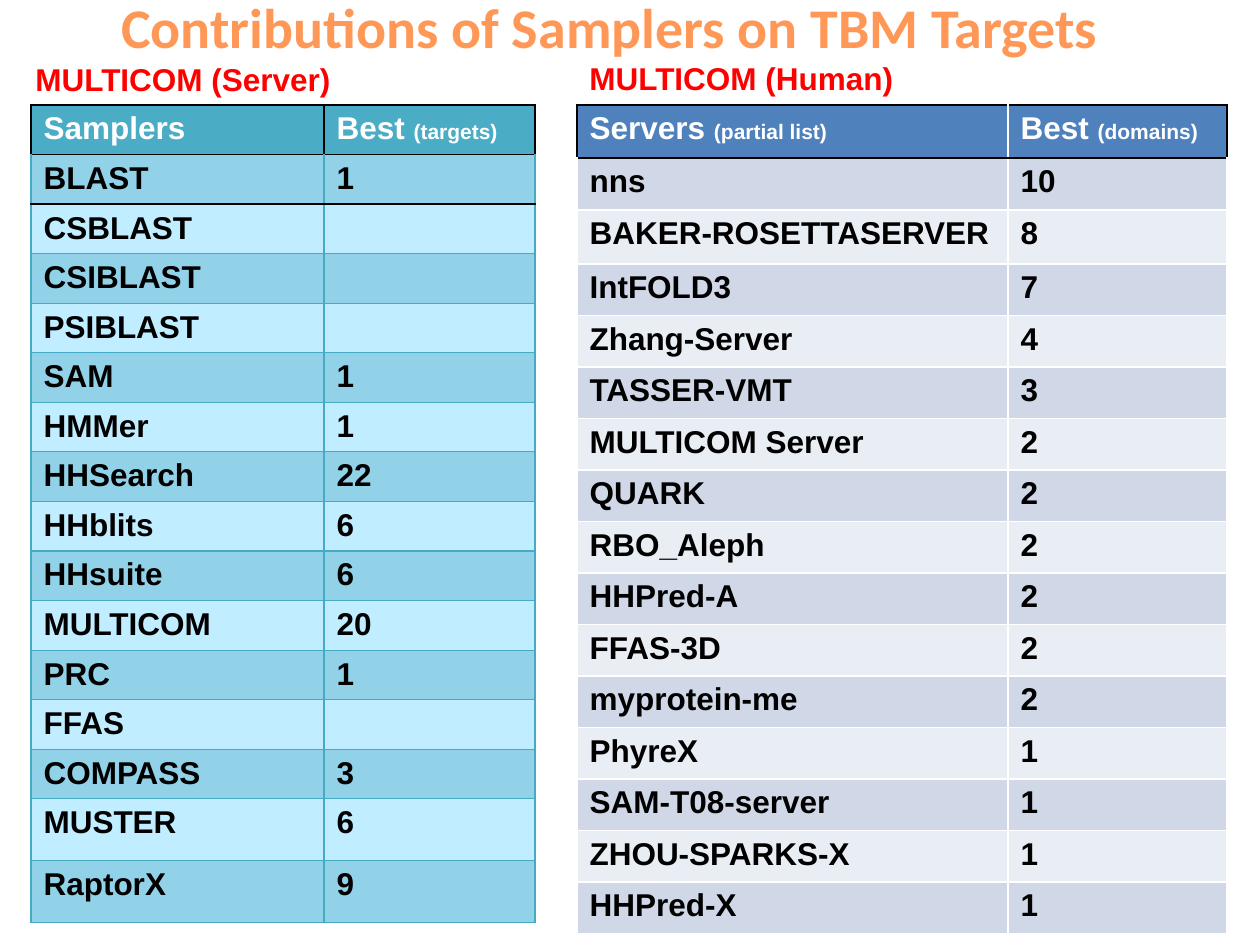
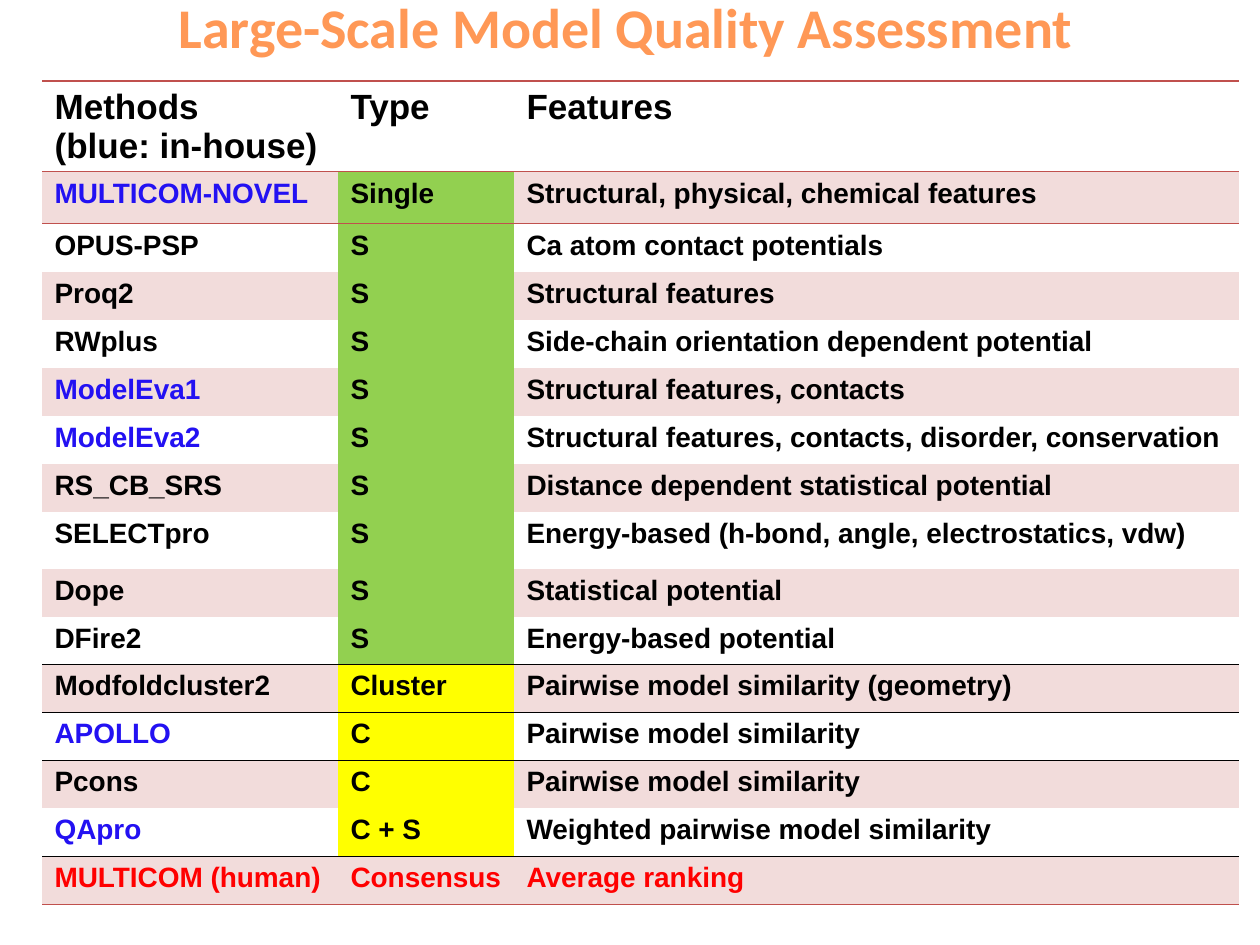
import pptx
import pptx.dml.color
import pptx.enum.text
import pptx.oxml.ns
import pptx.util
from lxml import etree

RGBColor = pptx.dml.color.RGBColor
BLACK = RGBColor(0x00, 0x00, 0x00)
WHITE = RGBColor(0xFF, 0xFF, 0xFF)
RED = RGBColor(0xFF, 0x00, 0x00)
BLUE = RGBColor(0x23, 0x11, 0xF2)
ORANGE = RGBColor(0xFF, 0x98, 0x56)
GREEN = RGBColor(0x92, 0xD0, 0x50)
YELLOW = RGBColor(0xFF, 0xFF, 0x00)
TEAL = RGBColor(0x4B, 0xAC, 0xC6)
TEAL_LINE = RGBColor(0x46, 0xAA, 0xC5)
TEAL_BANDS = RGBColor(0x92, 0xD2, 0xE8), RGBColor(0xC0, 0xED, 0xFF)
NAVY = RGBColor(0x4F, 0x81, 0xBD)
NAVY_BANDS = RGBColor(0xD0, 0xD8, 0xE8), RGBColor(0xE9, 0xED, 0xF4)
BRICK = RGBColor(0xC0, 0x50, 0x4D)
BRICK_BANDS = RGBColor(0xF2, 0xDC, 0xDB), None

PX_PER_INCH = 126
TITLE_ONLY = 5
NO_GRID_STYLE = "{2D5ABB26-0587-4C30-8999-92F81FD0307C}"

SAMPLERS = [
    ("BLAST", "1"), ("CSBLAST", ""), ("CSIBLAST", ""), ("PSIBLAST", ""),
    ("SAM", "1"), ("HMMer", "1"), ("HHSearch", "22"), ("HHblits", "6"),
    ("HHsuite", "6"), ("MULTICOM", "20"), ("PRC", "1"), ("FFAS", ""),
    ("COMPASS", "3"), ("MUSTER", "6"), ("RaptorX", "9"),
]
SERVERS = [
    ("nns", "10"), ("BAKER-ROSETTASERVER", "8"), ("IntFOLD3", "7"),
    ("Zhang-Server", "4"), ("TASSER-VMT", "3"), ("MULTICOM Server", "2"),
    ("QUARK", "2"), ("RBO_Aleph", "2"), ("HHPred-A", "2"), ("FFAS-3D", "2"),
    ("myprotein-me", "2"), ("PhyreX", "1"), ("SAM-T08-server", "1"),
    ("ZHOU-SPARKS-X", "1"), ("HHPred-X", "1"),
]
METHODS = [
    ("MULTICOM-NOVEL", "Single", "Structural, physical, chemical features"),
    ("OPUS-PSP", "S", "Ca atom contact potentials"),
    ("Proq2", "S", "Structural features"),
    ("RWplus", "S", "Side-chain orientation dependent potential"),
    ("ModelEva1", "S", "Structural features, contacts"),
    ("ModelEva2", "S", "Structural features, contacts, disorder, conservation"),
    ("RS_CB_SRS", "S", "Distance dependent statistical potential"),
    ("SELECTpro", "S", "Energy-based (h-bond, angle, electrostatics, vdw)"),
    ("Dope", "S", "Statistical potential"),
    ("DFire2", "S", "Energy-based potential"),
    ("Modfoldcluster2", "Cluster", "Pairwise model similarity (geometry)"),
    ("APOLLO", "C", "Pairwise model similarity"),
    ("Pcons", "C", "Pairwise model similarity"),
    ("QApro", "C + S", "Weighted pairwise model similarity"),
    ("MULTICOM (human)", "Consensus", "Average ranking"),
]
IN_HOUSE = {"MULTICOM-NOVEL", "ModelEva1", "ModelEva2", "APOLLO", "QApro"}


def px(count):
    return pptx.util.Emu(round(count * 914400 / PX_PER_INCH))


def write_text(frame, text, size=18, color=BLACK, font="Arial", align=None, note=""):
    """Write bold lines into a frame; note follows in a smaller size."""
    for index, line in enumerate(text.split("\n")):
        para = frame.add_paragraph() if index else frame.paragraphs[0]
        para.alignment = align
        for words, points in ((line, size), (note, 12)):
            if words:
                span = para.add_run()
                span.text = words
                span.font.size = pptx.util.Pt(points)
                span.font.name = font
                span.font.bold = True
                span.font.color.rgb = color
        if not line:
            # An empty cell keeps its row low only with a set font size.
            end = etree.SubElement(para._p, pptx.oxml.ns.qn("a:endParaRPr"), sz="1600")
            etree.SubElement(end, pptx.oxml.ns.qn("a:latin"), typeface=font)


def add_page(deck, title, left, width):
    page = deck.slides.add_slide(deck.slide_layouts[TITLE_ONLY])
    box = page.shapes.title
    box.left, box.top, box.width, box.height = px(left), px(-53), px(width), px(158)
    box.text_frame.vertical_anchor = pptx.enum.text.MSO_ANCHOR.MIDDLE
    write_text(box.text_frame, title, size=32, color=ORANGE, font="Calibri",
               align=pptx.enum.text.PP_ALIGN.CENTER)
    return page


def add_label(page, text, left, top, width):
    box = page.shapes.add_textbox(px(left), px(top), px(width), px(51))
    box.text_frame.word_wrap = False
    write_text(box.text_frame, text, color=RED)


def add_grid(page, left, top, widths, heights, row_count):
    """Add an unstyled table; heights may be fractions of a px."""
    frame = page.shapes.add_table(row_count, len(widths), px(left), px(top),
                                  px(sum(widths)), px(sum(heights)))
    for style in frame.element.iter(pptx.oxml.ns.qn("a:tableStyleId")):
        style.text = NO_GRID_STYLE
    table = frame.table
    table.first_row = table.horz_banding = False
    for column, width in zip(table.columns, widths):
        column.width = px(width)
    for row, height in zip(table.rows, heights):
        row.height = px(height)
    return table


def set_borders(cell, **edges):
    """Draw the edges L, R, T, B that have a colour; call before set_fill."""
    properties = cell._tc.get_or_add_tcPr()
    for side in "LRTB":
        color = edges.get(side)
        if color is not None:
            points = 0.75 if color == TEAL_LINE else 1
            line = etree.SubElement(properties, pptx.oxml.ns.qn(f"a:ln{side}"),
                                    w=str(pptx.util.Pt(points)))
            fill = etree.SubElement(line, pptx.oxml.ns.qn("a:solidFill"))
            etree.SubElement(fill, pptx.oxml.ns.qn("a:srgbClr"), val=str(color))


def set_fill(cell, color):
    if color is None:
        cell.fill.background()
    else:
        cell.fill.solid()
        cell.fill.fore_color.rgb = color


def add_score_table(page, left, widths, heights, header, scores, header_fill,
                    bands, line, header_sides, black_rules):
    """Two columns with a header of (text, note) pairs and banded rows.

    black_rules holds the numbers of the row boundaries drawn in black.
    """
    table = add_grid(page, left, 105, widths, heights, len(scores) + 1)
    for row, values in enumerate([header] + scores):
        sides = [line] * 3 if row else header_sides
        for column, value in enumerate(values):
            cell = table.cell(row, column)
            set_borders(cell, L=sides[column], R=sides[column + 1],
                        T=BLACK if row in black_rules else line,
                        B=BLACK if row + 1 in black_rules else line)
            if row:
                set_fill(cell, bands[(row - 1) % 2])
                write_text(cell.text_frame, value)
            else:
                set_fill(cell, header_fill)
                write_text(cell.text_frame, value[0], color=WHITE, note=value[1])


def method_color(method, column):
    if method == "MULTICOM (human)":
        return RED
    return BLUE if column == 0 and method in IN_HOUSE else BLACK


def method_fill(row, kind, column):
    if column == 1 and kind != "Consensus":
        return YELLOW if kind.startswith("C") else GREEN
    return BRICK_BANDS[(row - 1) % 2]


def add_method_table(page):
    heights = [90, 52] + [48] * 6 + [57] + [48] * 7
    table = add_grid(page, 42, 81, [296, 176, 725], heights, len(METHODS) + 1)
    rules = {0: BRICK, 1: BRICK, 11: BLACK, 12: BLACK, 15: BLACK, 16: BRICK}
    header = ("Methods\n(blue: in-house)", "Type", "Features")
    for row, values in enumerate([header] + METHODS):
        for column, value in enumerate(values):
            cell = table.cell(row, column)
            set_borders(cell, T=rules.get(row), B=rules.get(row + 1))
            if row:
                set_fill(cell, method_fill(row, values[1], column))
                write_text(cell.text_frame, value, size=16,
                           color=method_color(values[0], column))
            else:
                set_fill(cell, None)
                write_text(cell.text_frame, value, size=20)


def main():
    deck = pptx.Presentation()
    deck.slide_width, deck.slide_height = px(1260), px(945)

    page = add_page(deck, "Contributions of Samplers on TBM Targets", 2, 1216)
    add_score_table(page, 31, [293, 211], [694 / 14] * 14 + [62] * 2,
                    [("Samplers", ""), ("Best ", "(targets)")], SAMPLERS,
                    TEAL, TEAL_BANDS, TEAL_LINE, [BLACK] * 3, {0, 1, 2})
    add_label(page, "MULTICOM (Server)", 23, 54, 324)
    add_label(page, "MULTICOM (Human)", 577, 53, 333)
    add_score_table(page, 577, [431, 219], [53, 52, 54] + [670 / 13] * 13,
                    [("Servers ", "(partial list)"), ("Best ", "(domains)")], SERVERS,
                    NAVY, NAVY_BANDS, WHITE, [BLACK, WHITE, BLACK], {0, 1})

    page = add_page(deck, "Large-Scale Model Quality Assessment", 13, 1226)
    add_method_table(page)
    deck.save("out.pptx")


if __name__ == "__main__":
    main()
